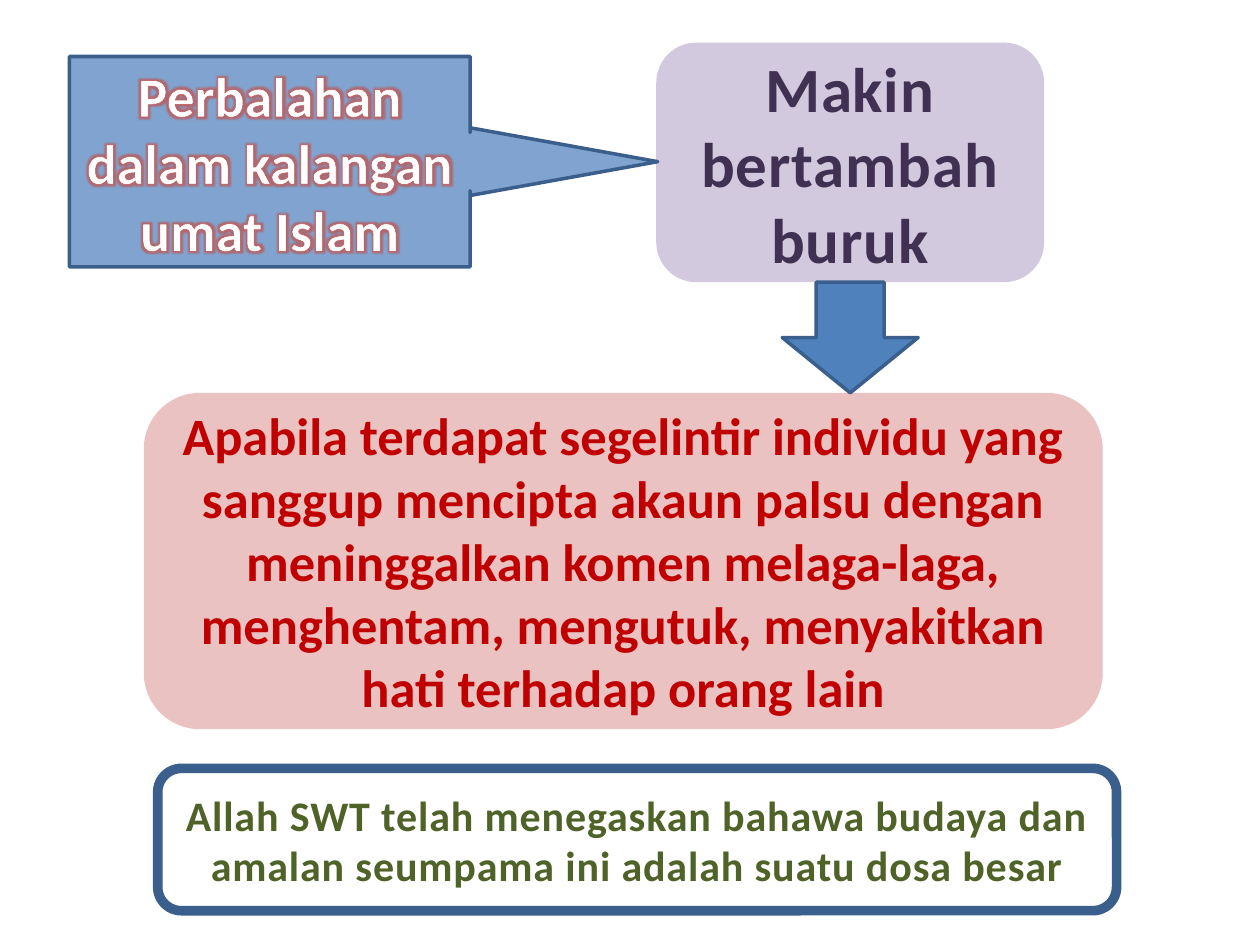
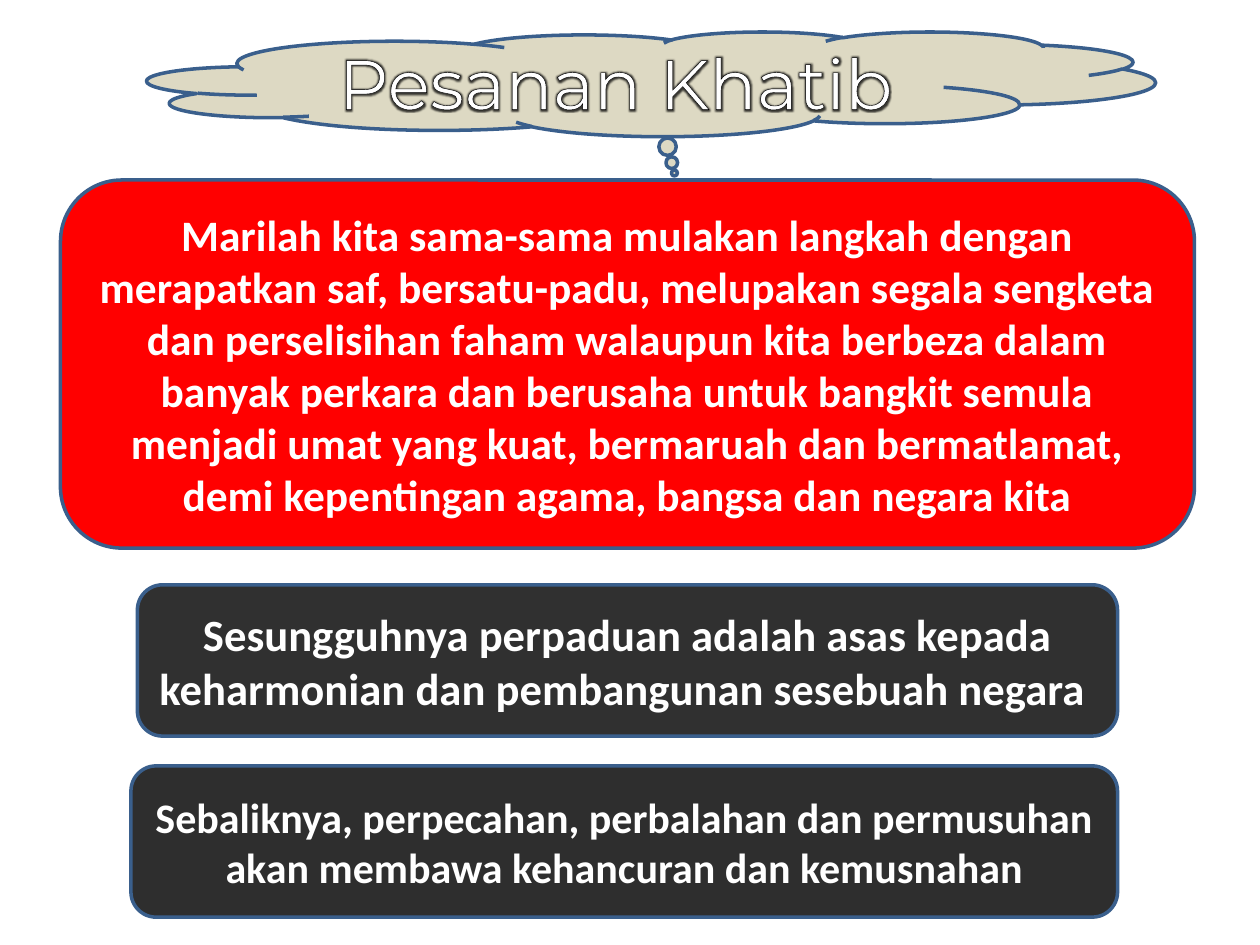
from dataclasses import dataclass

from lxml.etree import SubElement
from pptx import Presentation
from pptx.dml.color import RGBColor
from pptx.enum.shapes import MSO_SHAPE as SHAPE
from pptx.enum.text import MSO_ANCHOR as ANCHOR, PP_ALIGN as ALIGN
from pptx.oxml.ns import qn
from pptx.util import Cm, Pt


@dataclass(frozen=True)
class Theme:
    white: str = "FFFFFF"
    black: str = "000000"
    blue: str = "4F81BD"
    edge: str = "3A5F8C"
    lilac: str = "CCC1DA"
    purple: str = "403152"
    pink: str = "E6B9B8"
    crimson: str = "C00000"
    brick: str = "C0504D"
    green: str = "4F6228"
    red: str = "FF0000"
    sand: str = "DDD9C3"
    body_font: str = "Calibri"
    title_font: str = "Montserrat"
    line: float = 2
    thick_line: float = 5.5
    title: float = 40
    worse: float = 36
    dispute: float = 32
    accounts: float = 30
    unity: float = 25.5
    message: float = 24.8
    note: float = 24


T = Theme()

# Content: boxes are left, top, width, height in cm
WORSE_BOX = (13.23, 0.86, 7.82, 4.83)
ACCOUNTS_BOX = (2.9, 7.92, 19.33, 6.78)
ARROW_WIDTH = 2.74


def arrow_between(upper, lower, width):
    """Box centred below upper, filling the gap down to lower."""
    left, top, w, h = upper
    return left + (w - width) / 2, top + h, width, lower[1] - top - h


SLIDES = [
    [
        dict(box=WORSE_BOX, kind=SHAPE.ROUNDED_RECTANGLE, fill=T.lilac, alpha=87, line=0,
             text="Makin bertambah buruk",
             fmt=dict(size=T.worse, color=T.purple, spacing=0.5)),
        dict(box=ACCOUNTS_BOX, kind=SHAPE.ROUNDED_RECTANGLE, fill=T.pink, alpha=87, line=0,
             text="Apabila terdapat segelintir individu yang sanggup mencipta akaun palsu "
                  "dengan meninggalkan komen melaga-laga, menghentam, mengutuk, menyakitkan "
                  "hati terhadap orang lain",
             fmt=dict(size=T.accounts, color=T.crimson)),
        dict(box=(1.4, 1.14, 11.86, 4.24), kind=SHAPE.RIGHT_ARROW_CALLOUT,
             adj=(0.276, 0.161, 0.892, 0.712), fill=T.blue, alpha=72,
             text="Perbalahan dalam kalangan umat Islam",
             fmt=dict(size=T.dispute, outline=(T.brick, 0.52), glow=(T.brick, 5, 70))),
        dict(box=arrow_between(WORSE_BOX, ACCOUNTS_BOX, ARROW_WIDTH),
             kind=SHAPE.DOWN_ARROW, fill=T.blue),
        dict(box=(3.18, 15.49, 19.33, 2.87), kind=SHAPE.ROUNDED_RECTANGLE,
             fill=T.white, line=T.thick_line,
             text="Allah SWT telah menegaskan bahawa budaya dan amalan seumpama ini adalah "
                  "suatu dosa besar",
             fmt=dict(size=T.note, color=T.green, spacing=0.5)),
    ],
    [
        dict(box=(1.22, 3.63, 22.86, 7.42), kind=SHAPE.FLOWCHART_ALTERNATE_PROCESS, fill=T.red,
             text="Marilah kita sama-sama mulakan langkah dengan merapatkan saf, bersatu-padu, "
                  "melupakan segala sengketa dan perselisihan faham walaupun kita berbeza dalam "
                  "banyak perkara dan berusaha untuk bangkit semula menjadi umat yang kuat, "
                  "bermaruah dan bermatlamat, demi kepentingan agama, bangsa dan negara kita",
             fmt=dict(size=T.message)),
        dict(box=(2.77, 11.79, 19.76, 3.05), kind=SHAPE.FLOWCHART_ALTERNATE_PROCESS,
             fill=T.black, alpha=81,
             text="Sesungguhnya perpaduan adalah asas kepada keharmonian dan pembangunan "
                  "sesebuah negara ",
             fmt=dict(size=T.unity)),
        dict(box=(2.64, 15.44, 19.89, 3.05), kind=SHAPE.FLOWCHART_ALTERNATE_PROCESS,
             fill=T.black, alpha=82,
             text="Sebaliknya, perpecahan, perbalahan dan permusuhan akan membawa kehancuran "
                  "dan kemusnahan",
             fmt=dict(size=T.note)),
        dict(box=(2.97, 0.64, 20.32, 2.11), kind=SHAPE.CLOUD_CALLOUT, adj=(0.023, 0.85),
             fill=T.sand, text="Pesanan Khatib",
             fmt=dict(size=T.title, font=T.title_font, bold=False,
                      outline=(T.black, 0.75), glow=(T.black, 3, 75))),
    ],
]


def add_color(parent, color, alpha=100):
    clr = SubElement(parent, qn("a:srgbClr"), val=color)
    if alpha < 100:
        SubElement(clr, qn("a:alpha"), val=str(alpha * 1000))


def write(tf, text, *, size, color=T.white, font=T.body_font, bold=True,
          spacing=0, outline=None, glow=None):
    """Put one centred paragraph into a text frame."""
    tf.word_wrap = True
    tf.vertical_anchor = ANCHOR.MIDDLE
    p = tf.paragraphs[0]
    p.alignment = ALIGN.CENTER
    r = p.add_run()
    r.text = text
    f = r.font
    f.size, f.bold = Pt(size), bold
    f.color.rgb = RGBColor.from_string(color)
    rPr = r._r.get_or_add_rPr()
    if spacing:
        rPr.set("spc", str(round(spacing * 100)))
    # Letter outline goes before the fill, glow after it
    if outline:
        line_color, width = outline
        ln = SubElement(rPr, qn("a:ln"), w=str(Pt(width)))
        add_color(SubElement(ln, qn("a:solidFill")), line_color)
        rPr.insert(0, ln)
    if glow:
        glow_color, radius, alpha = glow
        effects = SubElement(rPr, qn("a:effectLst"))
        add_color(SubElement(effects, qn("a:glow"), rad=str(Pt(radius))), glow_color, alpha)
    f.name = font


def add_part(slide, *, box, kind, fill, alpha=100, line=T.line, adj=(), text="", fmt=None):
    """Draw one filled shape with its text."""
    sp = slide.shapes.add_shape(kind, *(Cm(v) for v in box))
    sp.shadow.inherit = False
    for i, value in enumerate(adj):
        sp.adjustments[i] = value
    sp.fill.solid()
    sp.fill.fore_color.rgb = RGBColor.from_string(fill)
    if alpha < 100:
        clr = sp._element.spPr.find(qn("a:solidFill"))[0]
        SubElement(clr, qn("a:alpha"), val=str(alpha * 1000))
    if line:
        sp.line.color.rgb = RGBColor.from_string(T.edge)
        sp.line.width = Pt(line)
    else:
        sp.line.fill.background()
    if text:
        write(sp.text_frame, text, **fmt)


def main():
    prs = Presentation()
    prs.slide_width, prs.slide_height = Cm(25.4), Cm(19.05)
    blank = prs.slide_layouts[6]
    for parts in SLIDES:
        slide = prs.slides.add_slide(blank)
        for part in parts:
            add_part(slide, **part)
    prs.save("out.pptx")


if __name__ == "__main__":
    main()
